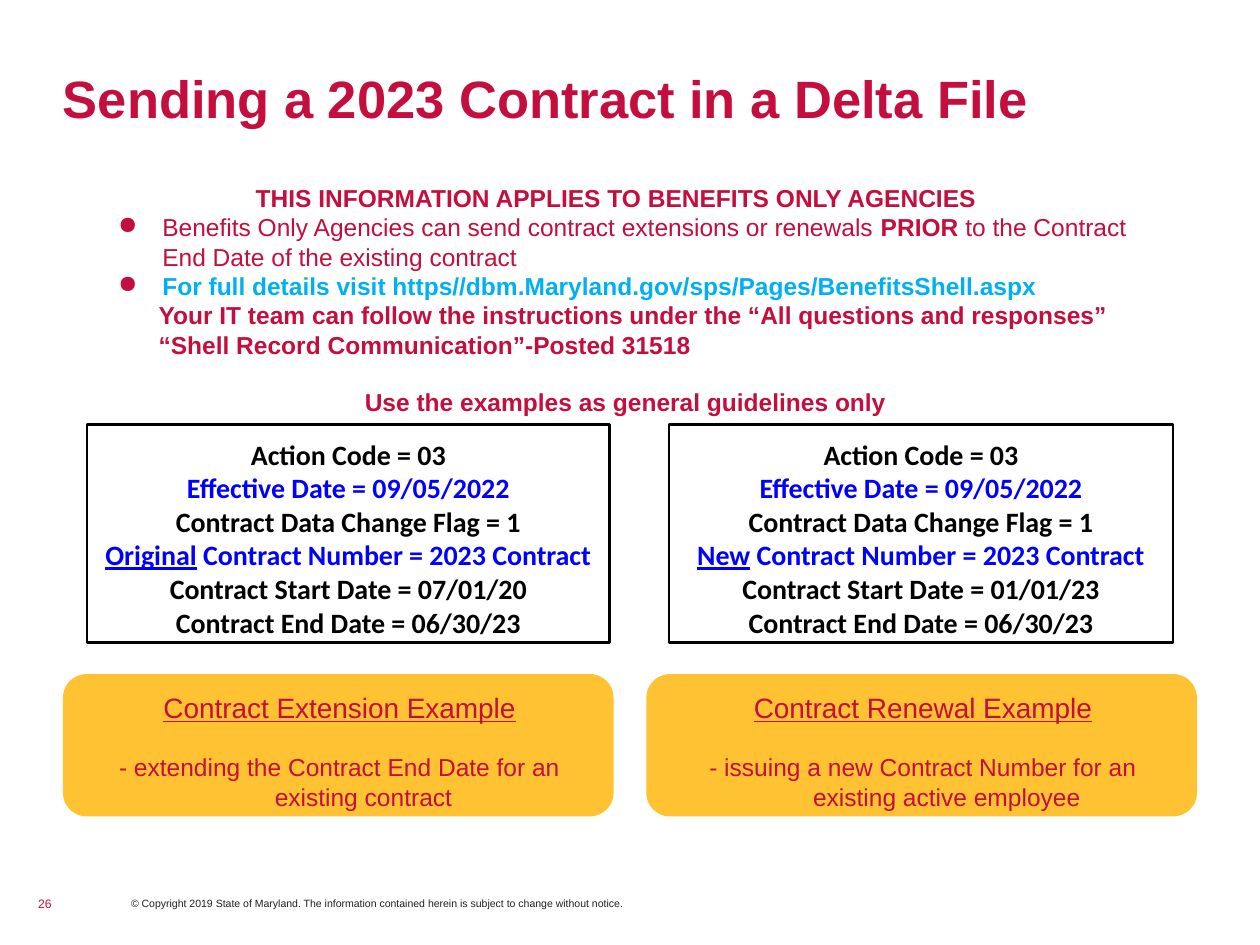
from lxml.etree import SubElement
from pptx import Presentation
from pptx.dml.color import RGBColor
from pptx.enum.shapes import MSO_SHAPE
from pptx.enum.text import MSO_ANCHOR, PP_ALIGN
from pptx.oxml.ns import qn
from pptx.util import Inches, Pt

HUES = {"red": "C40E3E", "gold": "FFC233", "sky": "00B0F0",
        "blue": "0000FF", "black": "000000", "ink": "231F20"}
BLANK_LINE = 16.1  # height of one 14 pt line, in points


def hue(name):
    return RGBColor.from_string(HUES[name])


def set_frame(shape, pad=(0, 0), anchor=MSO_ANCHOR.TOP):
    frame = shape.text_frame
    frame.word_wrap = True
    frame.vertical_anchor = anchor
    frame.margin_left = frame.margin_right = Inches(pad[0])
    frame.margin_top = frame.margin_bottom = Inches(pad[1])
    return frame


def add_text(slide, box, pad=(0, 0), anchor=MSO_ANCHOR.TOP):
    return set_frame(slide.shapes.add_textbox(*map(Inches, box)), pad, anchor)


def add_para(frame, runs, size, color="red", bold=False, font="Arial",
             align=PP_ALIGN.LEFT, left=0, first=0, before=0, bullet=None):
    """Add a paragraph; runs is a string or a list of (text, run font settings)."""
    para = frame.paragraphs[0]
    if para.runs:
        para = frame.add_paragraph()
    para.alignment = align
    props = para._p.get_or_add_pPr()
    props.set("marL", str(Inches(left)))
    props.set("indent", str(Inches(first)))
    if before:
        para.space_before = Pt(before)
    if bullet:
        tint = SubElement(props, qn("a:buClr"))
        SubElement(tint, qn("a:srgbClr"), val=HUES["red"])
        SubElement(props, qn("a:buChar"), char=bullet)
    para.font.size, para.font.name, para.font.bold = Pt(size), font, bold
    para.font.color.rgb = hue(color)
    for text, style in [(runs, {})] if isinstance(runs, str) else runs:
        run = para.add_run()
        run.text = text
        for key, value in style.items():
            setattr(run.font, key, value)
    return para


def add_box(slide, kind, box, fill=None, line=None):
    shape = slide.shapes.add_shape(kind, *map(Inches, box))
    shape.shadow.inherit = False
    if fill:
        shape.fill.solid()
        shape.fill.fore_color.rgb = hue(fill)
    else:
        shape.fill.background()
    if line:
        shape.line.color.rgb = hue(line)
        shape.line.width = Pt(1.5)
    else:
        shape.line.fill.background()
    return shape


def add_title(slide, box):
    para = add_para(add_text(slide, box), "Sending a 2023 Contract in a Delta File",
                    30, bold=True)
    para.line_spacing = 0.85


def add_intro(slide, box):
    frame = add_text(slide, box, (0.1, 0.1))
    item = {"left": 0.5, "first": -0.35, "bullet": "●"}
    add_para(frame, "THIS INFORMATION APPLIES TO BENEFITS ONLY AGENCIES", 14,
             bold=True, align=PP_ALIGN.CENTER)
    add_para(frame, [
        ("Benefits Only Agencies can send contract extensions or renewals ", {}),
        ("PRIOR", {"bold": True}),
        (" to the Contract End Date of the existing contract", {})], 14, **item)
    add_para(frame, "For full details visit "
             "https//dbm.Maryland.gov/sps/Pages/BenefitsShell.aspx",
             14, "sky", True, **item)
    for text in ("Your IT team can follow the instructions under the "
                 "“All questions and responses”",
                 "“Shell Record Communication”-Posted 31518"):
        add_para(frame, text, 14, bold=True, left=0.47)
    add_para(frame, "Use the examples as general guidelines only", 14, bold=True,
             align=PP_ALIGN.CENTER, left=0.15, before=BLANK_LINE)


def add_record(slide, box, kind, start):
    """Outlined panel with the field values of one contract record."""
    shape = add_box(slide, MSO_SHAPE.RECTANGLE, box, line="black")
    frame = set_frame(shape, (0.1, 0.1))
    number = [(kind, {"underline": True}), (" Contract Number = 2023 Contract", {})]
    rows = [("Action Code = 03", "black"),
            ("Effective Date = 09/05/2022", "blue"),
            ("Contract Data Change Flag = 1", "black"),
            (number, "blue"),
            (f"Contract Start Date = {start}", "black"),
            ("Contract End Date = 06/30/23", "black")]
    for runs, color in rows:
        add_para(frame, runs, 16, color, True, "Calibri", PP_ALIGN.CENTER,
                 0.07, -0.07)


def add_card(slide, box, head, note):
    """Gold rounded card that explains the record above it."""
    left, top, wide, high = box
    add_box(slide, MSO_SHAPE.ROUNDED_RECTANGLE, box, fill="gold")
    frame = add_text(slide, (left + 0.12, top + 0.08, 4.15, high - 0.15),
                     (0.1, 0.05))
    hang = {"align": PP_ALIGN.CENTER, "left": 0.38, "first": -0.38}
    add_para(frame, [(head, {"underline": True})], 16, **hang)
    add_para(frame, note, 14, before=BLANK_LINE, **hang)


def add_footer(slide, box):
    left, top, wide, high = box
    mid = MSO_ANCHOR.MIDDLE
    add_para(add_text(slide, (left, top, 0.12, high), anchor=mid), "26", 7,
             align=PP_ALIGN.RIGHT)
    add_para(add_text(slide, (left + 0.75, top, wide - 0.75, high), anchor=mid),
             "© Copyright 2019 State of Maryland. The information contained herein "
             "is subject to change without notice.", 6, "ink")


def main():
    deck = Presentation()
    deck.slide_width, deck.slide_height = Inches(10), Inches(7.5)
    slide = deck.slides.add_slide(deck.slide_layouts[6])
    add_title(slide, (0.5, 0.6, 9, 0.43))
    add_intro(slide, (0.69, 1.35, 8.4, 2.02))
    # Two examples side by side
    add_record(slide, (0.69, 3.37, 4.15, 1.73), "Original", "07/01/20")
    add_record(slide, (5.31, 3.37, 4, 1.73), "New", "01/01/23")
    add_card(slide, (0.5, 5.35, 4.37, 1.13), "Contract Extension Example",
             "- extending the Contract End Date for an existing contract")
    add_card(slide, (5.13, 5.35, 4.37, 1.13), "Contract Renewal Example",
             "- issuing a new Contract Number for an existing active employee")
    add_footer(slide, (0.29, 7.11, 4.71, 0.12))
    deck.save("out.pptx")


if __name__ == "__main__":
    main()
